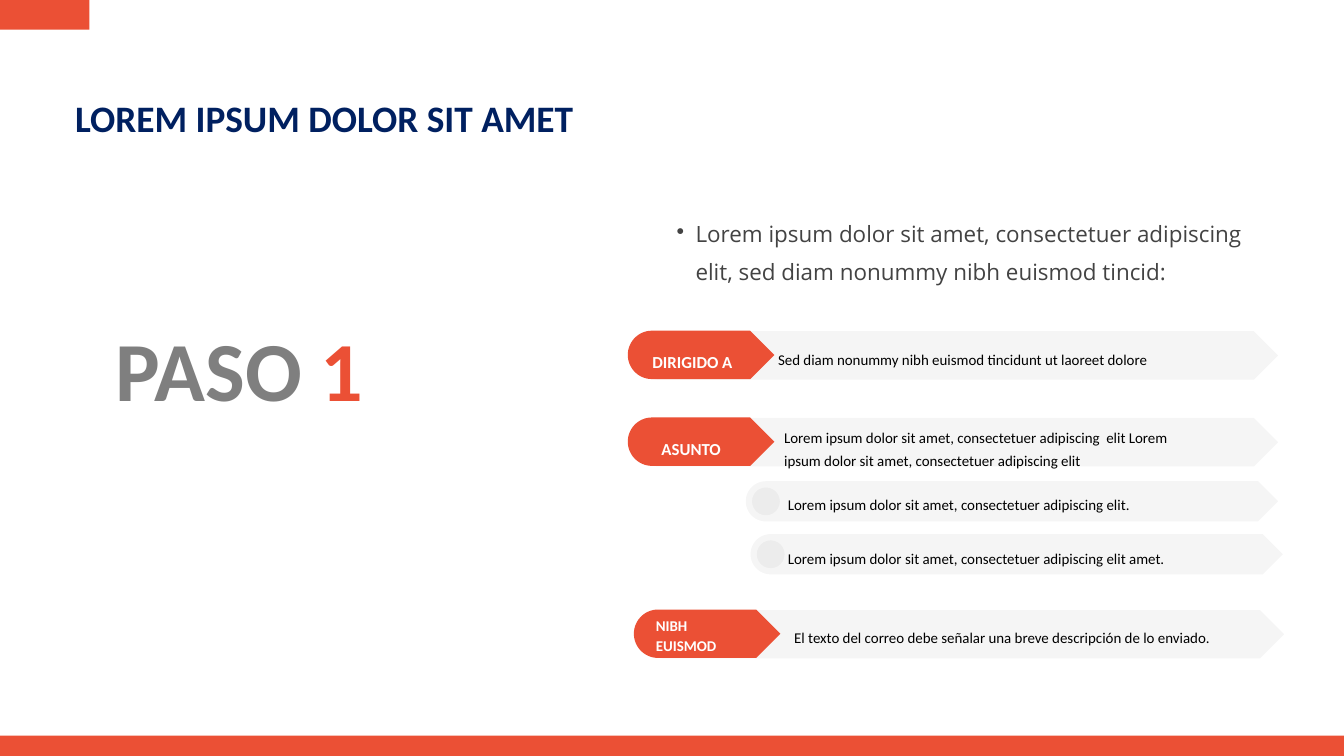
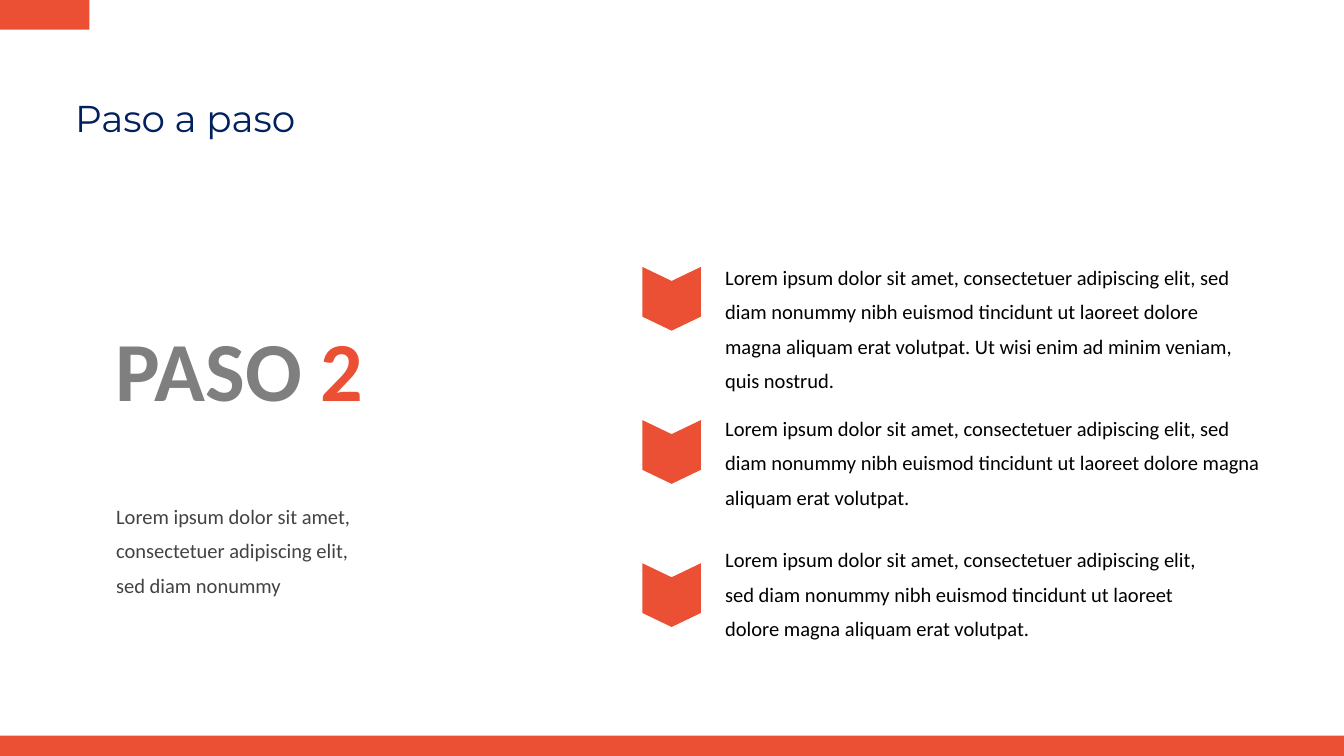
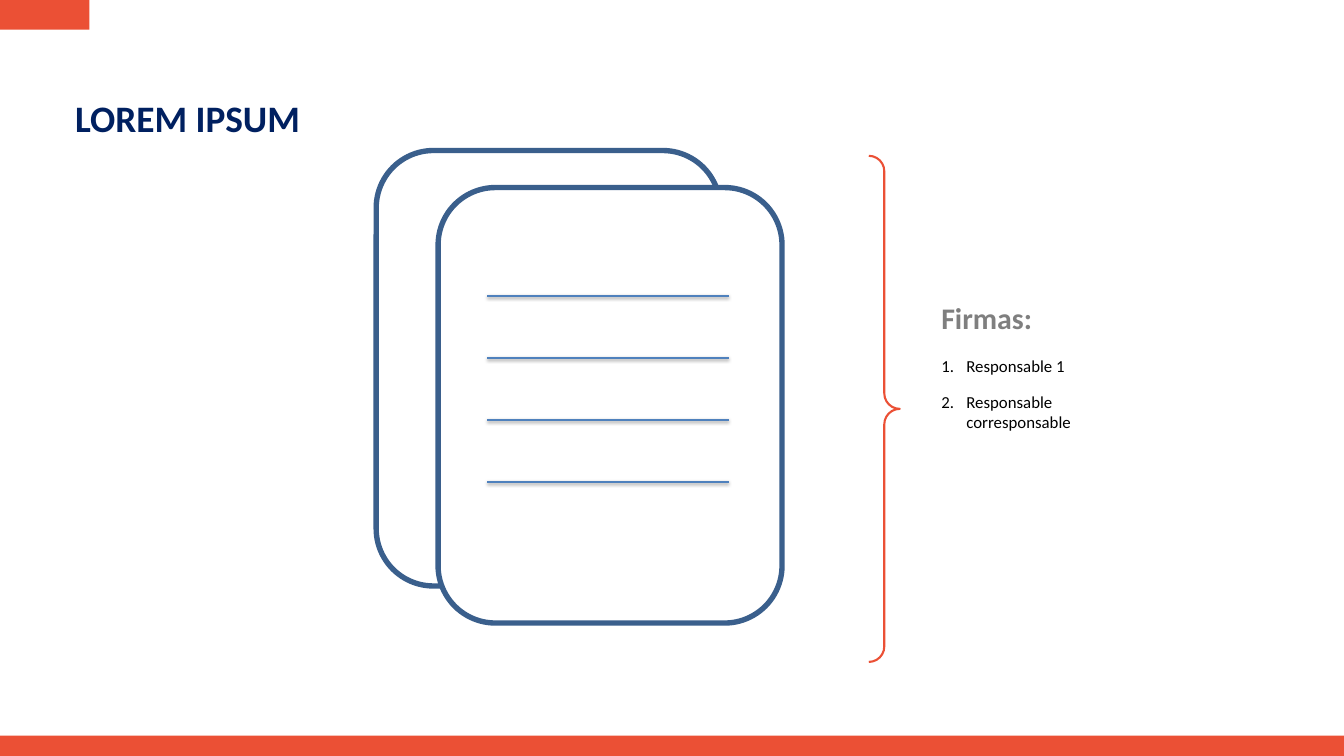
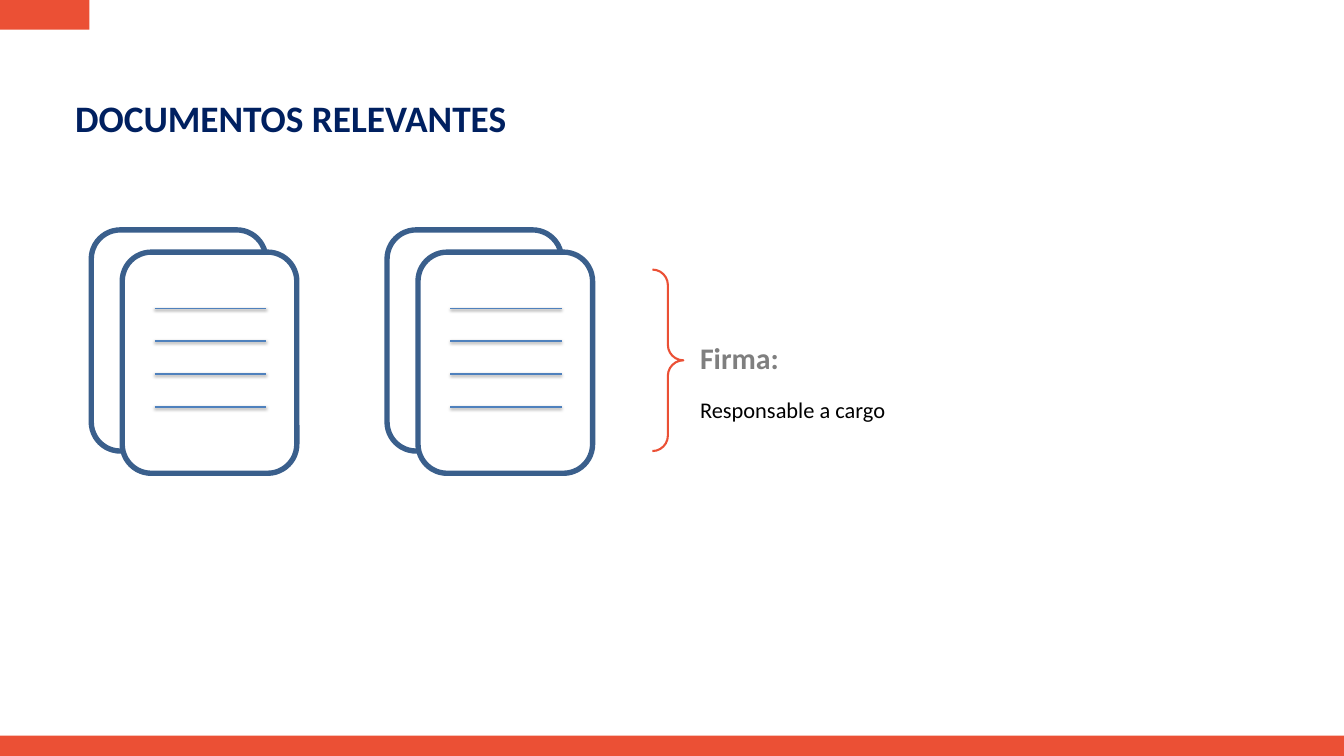
import math
from dataclasses import dataclass

from pptx import Presentation, util as u
from pptx.dml.color import RGBColor
from pptx.enum import shapes, text
from pptx.oxml import parse_xml
from pptx.oxml.ns import nsdecls


@dataclass(frozen=True)
class Theme:
    accent: str = "EB5035"
    navy: str = "002060"
    grey: str = "7F7F7F"
    body: str = "434343"
    black: str = "000000"
    white: str = "FFFFFF"
    shade: str = "191919"
    outline: str = "3A5F8C"
    rule: str = "4F81BD"
    font: str = "Calibri"
    light_font: str = "Montserrat"
    bullet_font: str = "Open Sans"
    title: int = 40
    step: int = 90
    heading: int = 32
    lead: int = 24
    para: int = 22
    label: int = 18
    small: int = 16
    tiny: int = 15


T = Theme()


def paint(sp, fill=None, line=None, width=0, alpha=None):
    """Set fill, outline and fill opacity (percent), and drop the shadow."""
    sp.shadow.inherit = False
    if fill:
        sp.fill.solid()
        sp.fill.fore_color.rgb = RGBColor.from_string(fill)
    else:
        sp.fill.background()
    if line:
        sp.line.color.rgb = RGBColor.from_string(line)
        sp.line.width = u.Pt(width)
    else:
        sp.line.fill.background()
    if alpha:
        color = sp.element.spPr.xpath("./a:solidFill/a:srgbClr")[0]
        color.append(parse_xml(f'<a:alpha {nsdecls("a")} val="{alpha * 1000}"/>'))


def add_text(s, box, paras, spacing=1.0, align=None, inset=(0, 0)):
    """Add a text box from (runs, space before, bullet) paragraphs.

    A run is (text, size, colour, bold, font); a bullet is (tag, colour, indent, hang).
    """
    tf = s.shapes.add_textbox(*map(u.Cm, box)).text_frame
    tf.word_wrap = True
    tf.auto_size = text.MSO_AUTO_SIZE.SHAPE_TO_FIT_TEXT
    tf.margin_left = tf.margin_right = u.Cm(inset[0])
    tf.margin_top = tf.margin_bottom = u.Cm(inset[1])
    for i, (runs, before, bullet) in enumerate(paras):
        p = tf.add_paragraph() if i else tf.paragraphs[0]
        p.line_spacing = spacing
        p.alignment = align
        if before:
            p.space_before = u.Pt(before)
        if bullet:
            tag, color, indent, hang = bullet
            pPr = p._p.get_or_add_pPr()
            pPr.set("marL", str(u.Cm(indent)))
            pPr.set("indent", str(-u.Cm(hang)))
            pPr.append(parse_xml(f'<a:buClr {nsdecls("a")}><a:srgbClr val="{color}"/></a:buClr>'))
            pPr.append(parse_xml(f'<a:{tag} {nsdecls("a")}/>'))
        for words, size, color, bold, font in runs:
            r = p.add_run()
            r.text = words
            r.font.size = u.Pt(size)
            r.font.bold = bold
            r.font.name = font
            r.font.color.rgb = RGBColor.from_string(color)


prs = Presentation()
prs.slide_width, prs.slide_height = u.Cm(50.8), u.Cm(28.575)

# Shared parts: title, corner tab and bottom band
titles = [
    ("LOREM IPSUM DOLOR SIT AMET", True, T.font),
    ("Paso a paso", False, T.light_font),
    ("LOREM IPSUM", True, T.font),
    ("DOCUMENTOS RELEVANTES", True, T.font),
]
for title, bold, font in titles:
    s = prs.slides.add_slide(prs.slide_layouts[6])
    add_text(s, (2.84, 3.25, 25.93, 1.7), [([(title, T.title, T.navy, bold, font)], 0, None)], 1.21)
    for band in [(0, 0, 3.38, 1.12), (0, 27.81, 50.8, 0.76)]:
        paint(s.shapes.add_shape(shapes.MSO_SHAPE.RECTANGLE, *map(u.Cm, band)), T.accent)

# Step number on the first two slides
for number, s in enumerate(list(prs.slides)[:2], 1):
    runs = [("PASO ", T.step, T.grey, True, T.font), (str(number), T.step, T.accent, True, T.font)]
    add_text(s, (3.38, 10.49, 11.35, 5.38), [(runs, 0, None)], 1.4, text.PP_ALIGN.CENTER)

# Slide 1: e-mail fields
s = prs.slides[0]
lead = "Lorem ipsum dolor sit amet, consectetuer adipiscing elit, sed diam nonummy nibh euismod tincid:"
add_text(s, (24.84, 7.92, 22.71, 3.89),
         [([(lead, T.lead, T.body, False, T.bullet_font)], 0, ('buChar char="•"', T.body, 1.45, 0.71))], 1.4)

pills = []
for left, top in [(23.98, 12.52), (23.98, 15.8), (24.21, 23.06)]:
    pills.append((left, top, 24.33, 1.83, T.shade, 4))
    pills.append((left - 0.25, top - 0.02, 5.54, 1.83, T.accent, None))
sub_pills = [(28.19, 18.19, 20.12, 1.52, T.shade, 4), (28.37, 20.19, 20.12, 1.52, T.shade, 4)]
for left, top, width, height, color, alpha in pills + sub_pills:
    radius = height / 2
    angles = [math.radians(a) for a in range(90, 271, 6)]
    points = [(left + radius + radius * math.cos(a), top + radius + radius * math.sin(a)) for a in angles]
    points += [(left + width - radius, top), (left + width, top + radius), (left + width - radius, top + height)]
    points = [(u.Cm(x), u.Cm(y)) for x, y in points]
    outline = s.shapes.build_freeform(*points[0])
    outline.add_line_segments(points[1:])
    paint(outline.convert_to_shape(), color, alpha=alpha)
for left, top, width, height, color, alpha in sub_pills:
    gap, size = 0.155 * height, 0.69 * height
    dot = (left + gap, top + gap, size, size)
    paint(s.shapes.add_shape(shapes.MSO_SHAPE.OVAL, *map(u.Cm, dot)), color, alpha=alpha)

labels = [
    ("DIRIGIDO A ", (24.38, 12.98, 3.73, 0.84), T.label, 1.4, text.PP_ALIGN.CENTER),
    ("ASUNTO", (24.79, 16.26, 2.67, 0.84), T.label, 1.4, text.PP_ALIGN.CENTER),
    ("NIBH EUISMOD", (24.79, 23.24, 3, 1.27), T.small, 1.11, None),
]
for label, box, size, spacing, align in labels:
    add_text(s, box, [([(label, size, T.white, True, T.font)], 0, None)], spacing, align)

space = [(" ", T.tiny, T.black, False, T.bullet_font)]
details = [
    ([], "Sed diam nonummy nibh euismod tincidunt ut laoreet dolore", (29.41, 13.03, 18.11, 0.71)),
    ([], "Lorem ipsum dolor sit amet, consectetuer adipiscing  elit Lorem ipsum dolor sit amet, "
         "consectetuer adipiscing elit", (29.64, 15.98, 15.98, 1.45)),
    (space, "Lorem ipsum dolor sit amet, consectetuer adipiscing elit.", (29.64, 18.54, 20.12, 0.71)),
    (space, "Lorem ipsum dolor sit amet, consectetuer adipiscing elit amet.", (29.64, 20.57, 20.12, 0.71)),
    ([], "El texto del correo debe señalar una breve descripción de lo enviado.", (30.02, 23.55, 20.12, 0.71)),
]
for prefix, detail, box in details:
    add_text(s, box, [(prefix + [(detail, T.small, T.black, False, T.font)], 0, None)], 1.31)

# Slide 2: steps marked by chevrons
s = prs.slides[1]
opening = "Lorem ipsum dolor sit amet, consectetuer adipiscing elit, sed diam nonummy"
sentence = opening + " nibh euismod tincidunt ut laoreet dolore magna aliquam erat volutpat."
notes = [
    (opening, T.body, (4.39, 18.67, 8.89, 3.58)),
    (sentence + " Ut wisi enim ad minim veniam, quis nostrud.", T.black, (27.41, 9.63, 19.63, 4.9)),
    (sentence, T.black, (27.41, 15.34, 20.52, 3.58)),
    (sentence, T.black, (27.41, 20.32, 18.77, 3.58)),
]
for note, color, box in notes:
    add_text(s, box, [([(note, T.para, color, False, T.font)], 0, None)], 1.4)
for top in (10.19, 15.98, 21.39):
    sp = s.shapes.add_shape(shapes.MSO_SHAPE.CHEVRON, u.Cm(24.18), u.Cm(top), u.Cm(2.41), u.Cm(2.21))
    sp.adjustments[0] = 0.24
    sp.rotation = 90
    paint(sp, T.accent)

# Slides 3 and 4: stacked sheets with ruled lines
# slide, back sheet, front offset, first rule from the back sheet, rule length, rule gap
stacks = [
    (2, (14.22, 5.69, 13, 16.46), (2.34, 1.4), (4.19, 5.49), 9.14, 2.35),
    (3, (14.63, 8.69, 6.6, 8.36), (1.17, 0.84), (2.39, 2.97), 4.22, 1.24),
    (3, (3.45, 8.69, 6.6, 8.36), (1.17, 0.84), (2.39, 2.97), 4.22, 1.24),
]
for index, (left, top, width, height), (dx, dy), (rule_x, rule_y), length, gap in stacks:
    s = prs.slides[index]
    for x, y, fill in [(left, top, None), (left + dx, top + dy, T.white)]:
        sheet = (x, y, width, height)
        sp = s.shapes.add_shape(shapes.MSO_SHAPE.ROUNDED_RECTANGLE, *map(u.Cm, sheet))
        paint(sp, fill, T.outline, 5.75)
    for i in range(4):
        x, y = left + rule_x, top + rule_y + i * gap
        rule = s.shapes.add_connector(shapes.MSO_CONNECTOR.STRAIGHT, *map(u.Cm, (x, y, x + length, y)))
        rule.line.color.rgb = RGBColor.from_string(T.rule)
        rule.line.width = u.Pt(0)
        rule.element.spPr.append(parse_xml(
            f'<a:effectLst {nsdecls("a")}><a:outerShdw blurRad="40000" dist="20000" dir="5400000" rotWithShape="0">'
            f'<a:srgbClr val="{T.black}"><a:alpha val="38000"/></a:srgbClr></a:outerShdw></a:effectLst>'))

# Slides 3 and 4: brace and signatures
numbered = ('buAutoNum type="arabicPeriod"', T.black, 0.95, 0.95)
signatures = [
    (2, (32.84, 5.89, 1.17, 19.13), (35.33, 11.18, 5.56, 5.31), "Firmas:",
     [("Responsable 1", T.label, 22, numbered), ("Responsable corresponsable", T.label, 17, numbered)]),
    (3, (24.66, 10.19, 1.17, 6.86), (26.21, 12.7, 7.82, 3.43), "Firma:",
     [("Responsable a cargo", T.lead, 22, None)]),
]
for index, brace, box, heading, signers in signatures:
    s = prs.slides[index]
    sp = s.shapes.add_shape(shapes.MSO_SHAPE.RIGHT_BRACE, *map(u.Cm, brace))
    sp.adjustments[0] = sp.adjustments[1] = 0.5
    paint(sp, line=T.accent, width=2.25)
    paras = [([(heading, T.heading, T.grey, True, T.font)], 0, None)]
    for signer, size, before, bullet in signers:
        paras.append(([(signer, size, T.black, False, T.font)], before, bullet))
    add_text(s, box, paras, inset=(0.25, 0.13))

prs.save("out.pptx")
